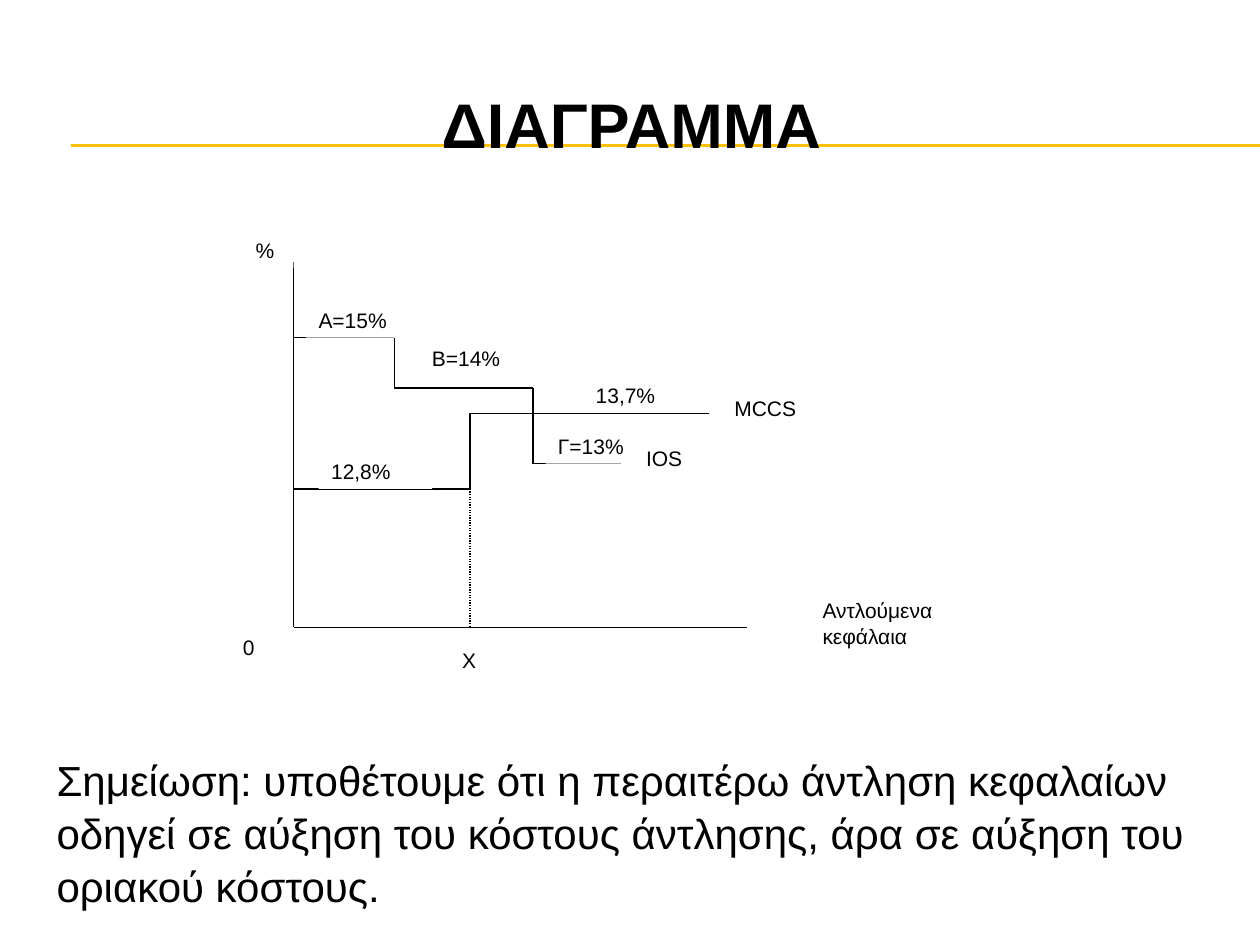
"""Build the slide with the investment opportunity and marginal cost schedules."""
import itertools
from dataclasses import dataclass

import pptx
import pptx.dml.color
import pptx.enum.dml
import pptx.enum.shapes
import pptx.enum.text
import pptx.oxml.ns
import pptx.util
from lxml import etree

Pt = pptx.util.Pt
INK = "000000"
PAPER = "FFFFFF"
GOLD = "FFC000"
FONT = "Arial"
LINE_SPACING = 1.05
ORIGIN_X, ORIGIN_Y, UNIT = 167.76, 358.56, 7.2


@dataclass
class Label:
    """A caption whose position and size are in diagram units."""
    text: str
    column: float
    row: float
    width: float
    height: float = 3
    inset: float = 7.2


AXES = [(0, 29), (0, 0), (36, 0)]
IOS_STEPS = [(0, 23), (8, 23), (8, 19), (19, 19), (19, 13), (26, 13)]
MCCS_RISE = [(0, 11), (14, 11), (14, 17)]
MCCS_TOP = [(14, 17), (33, 17)]
BREAK_POINT = [(14, 11), (14, 0)]

LABELS = [
    Label("%", -4, 31.5, 4),
    Label("Αντλούμενα\nκεφάλαια", 41, 3, 13, 5),
    Label("Α=15%", 1, 26, 8),
    Label("Β=14%", 10, 23, 8),
    Label("Γ=13%", 20, 16, 8),
    Label("12,8%", 2, 14, 9),
    Label("13,7%", 23, 20, 8),
    Label("MCCS", 34, 19, 7),
    Label("0", -5, 0, 3),
    Label("Χ", 11, -1, 9, inset=17.2),
    Label("IOS", 27, 15, 6),
]
NOTE = ("Σημείωση: υποθέτουμε ότι η περαιτέρω άντληση κεφαλαίων οδηγεί σε αύξηση "
        "του κόστους άντλησης, άρα σε αύξηση του οριακού κόστους.")


def color(value: str) -> pptx.dml.color.RGBColor:
    return pptx.dml.color.RGBColor.from_string(value)


def place(column: float, row: float) -> tuple[float, float]:
    return ORIGIN_X + column * UNIT, ORIGIN_Y - row * UNIT


def add_line(page, start: tuple, end: tuple, ink: str = INK, dotted: bool = False) -> None:
    line = page.shapes.add_connector(
        pptx.enum.shapes.MSO_CONNECTOR.STRAIGHT,
        *(Pt(length) for length in (*start, *end)))
    line.line.color.rgb = color(ink)
    line.line.width = Pt(0.75)
    if dotted:
        line.line.dash_style = pptx.enum.dml.MSO_LINE.ROUND_DOT
    etree.SubElement(line.element.spPr, pptx.oxml.ns.qn("a:effectLst"))


def add_path(page, corners: list, dotted: bool = False) -> None:
    for start, end in itertools.pairwise(corners):
        add_line(page, place(*start), place(*end), dotted=dotted)


def write(frame, text: str, size: float, bold: bool = False, centered: bool = False) -> None:
    frame.word_wrap = True
    alignment = pptx.enum.text.PP_ALIGN
    for index, words in enumerate(text.split("\n")):
        para = frame.add_paragraph() if index else frame.paragraphs[0]
        para.alignment = alignment.CENTER if centered else alignment.LEFT
        para.line_spacing = LINE_SPACING
        span = para.add_run()
        span.text = words
        span.font.name = FONT
        span.font.size = Pt(size)
        span.font.bold = bold
        span.font.color.rgb = color(INK)


def add_label(page, label: Label) -> None:
    left, top = place(label.column, label.row)
    box = page.shapes.add_shape(
        pptx.enum.shapes.MSO_SHAPE.RECTANGLE, Pt(left), Pt(top),
        Pt(label.width * UNIT), Pt(label.height * UNIT))
    box.shadow.inherit = False
    box.fill.solid()
    box.fill.fore_color.rgb = color(PAPER)
    box.line.fill.background()
    box.text_frame.vertical_anchor = pptx.enum.text.MSO_ANCHOR.TOP
    box.text_frame.margin_left = Pt(label.inset)
    write(box.text_frame, label.text, 12)


def add_title(page, text: str) -> None:
    title = page.shapes.title
    title.left, title.top, title.width, title.height = Pt(23.76), Pt(36), Pt(684), Pt(66.24)
    title.text_frame.vertical_anchor = pptx.enum.text.MSO_ANCHOR.MIDDLE
    write(title.text_frame, text, 36, bold=True, centered=True)
    title.element.getparent().append(title.element)


def add_note(page, text: str) -> None:
    box = page.shapes.add_textbox(Pt(25.2), Pt(426.24), Pt(694.8), Pt(94.32))
    write(box.text_frame, text, 24)


def main() -> None:
    deck = pptx.Presentation()
    deck.slide_width, deck.slide_height = Pt(720), Pt(540)
    page = deck.slides.add_slide(deck.slide_layouts[5])
    for height in (82.8, 83.52):
        add_line(page, (40.32, height), (720, height), GOLD)
    add_title(page, "ΔΙΑΓΡΑΜΜΑ ")
    for corners in (AXES, IOS_STEPS, MCCS_RISE):
        add_path(page, corners)
    for label in LABELS:
        add_label(page, label)
    add_path(page, MCCS_TOP)
    add_path(page, BREAK_POINT, dotted=True)
    add_note(page, NOTE)
    deck.save("out.pptx")


if __name__ == "__main__":
    main()
